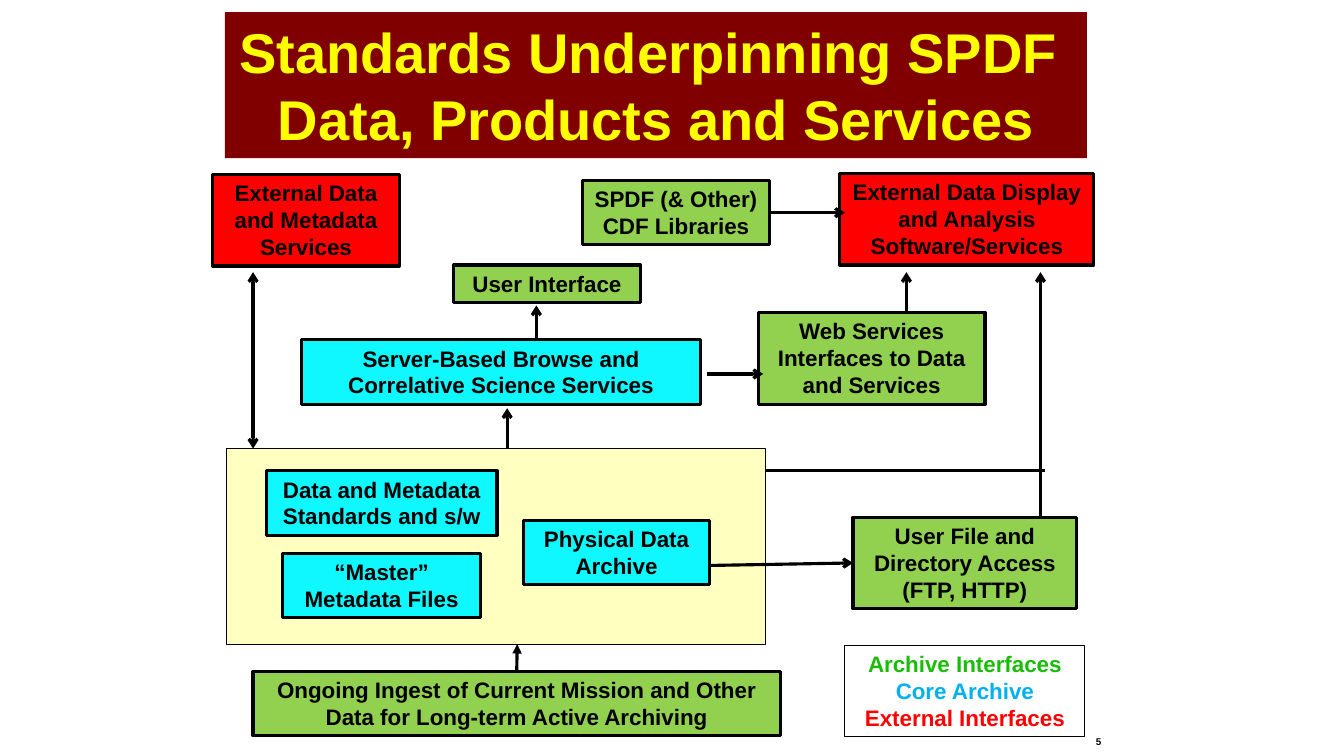
from pptx import Presentation
from pptx.dml.color import RGBColor
from pptx.enum.shapes import MSO_CONNECTOR, MSO_SHAPE
from pptx.enum.text import MSO_ANCHOR, MSO_AUTO_SIZE, PP_ALIGN
from pptx.oxml.ns import qn
from pptx.util import Inches, Pt
from lxml import etree

RECTANGLE = MSO_SHAPE.RECTANGLE
STRAIGHT = MSO_CONNECTOR.STRAIGHT
CENTER = PP_ALIGN.CENTER
TOP = MSO_ANCHOR.TOP
FIT_SHAPE = MSO_AUTO_SIZE.SHAPE_TO_FIT_TEXT
TOP_SIDE, LEFT_SIDE, RIGHT_SIDE = 0, 1, 3

THEME = {
    "font": "Arial",
    "title_size": 40, "body_size": 16, "number_size": 7,
    "thin": 0.75, "thick": 2.25,
    "ink": "000000", "title_fill": "800000", "title_text": "FFFF00",
    "interface": "92D050", "core": "10F8FF", "external": "FF0000",
    "archive": "FFFF00", "archive_opacity": 25,
    "interface_key": "18BD05", "core_key": "00B0F0", "external_key": "FF0000",
}

# Content: text lines and (left, top, width, height) in inches
TITLE = (["Standards Underpinning SPDF ", "Data, Products and Services"],
         (2.23, 0.12, 8.55, 1.45))
ARCHIVE_AREA = (2.25, 4.45, 5.34, 1.94)
PAGE_NUMBER = ("5", (10.69, 7.24, 0.41, 0.26))
BOX_HEIGHTS = {1: 0.37, 2: 0.64, 3: 0.91}  # by number of text rows

# name: (paragraphs, role, left, top, width, text rows)
BOXES = {
    "ingest": (["Ongoing Ingest of Current Mission and Other Data for "
                "Long-term Active Archiving"], "interface", 2.51, 6.66, 5.23, 2),
    "browse": (["Server-Based Browse and Correlative Science Services"],
               "core", 2.99, 3.37, 3.96, 2),
    "web": (["Web Services Interfaces to Data and Services"],
            "interface", 7.52, 3.1, 2.25, 3),
    "files": (["User File and Directory Access (FTP, HTTP)"],
              "interface", 8.46, 5.13, 2.22, 3),
    "display": (["External Data Display and Analysis Software/Services"],
                "external", 8.33, 1.72, 2.52, 3),
    "user": (["User Interface"], "interface", 4.5, 2.63, 1.85, 1),
    "services": (["External Data and Metadata Services"],
                 "external", 2.11, 1.73, 1.85, 3),
    "physical": (["Physical Data", "Archive"], "core", 5.19, 5.16, 1.85, 2),
    "standards": (["Data and Metadata Standards and s/w"],
                  "core", 2.64, 4.67, 2.29, 2),
    "master": (["“Master” Metadata Files"], "core", 2.8, 5.49, 1.97, 2),
    "cdf": (["SPDF (& Other)", "CDF Libraries"], "interface", 5.78, 1.79, 1.85, 2),
}

LEGEND_AT = (8.38, 6.4, 2.38, 0.91)
LEGEND = [("Archive Interfaces", "interface_key"),
          ("Core Archive", "core_key"),
          ("External Interfaces", "external_key")]

# (start, end, head at start, head at end, joined start, joined end)
LINKS = [
    ((2.51, 2.7), (2.51, 4.45), "arrow", "arrow", None, None),
    ((10.32, 5.13), (10.32, 2.7), None, "arrow", None, None),
    ((5.32, 3.38), (5.32, 3.03), None, "arrow", None, None),
    ((7.59, 4.67), (10.36, 4.67), None, None, None, None),
    ((7.03, 5.61), (8.46, 5.58), None, "arrow", None, ("files", LEFT_SIDE)),
    ((7.01, 3.71), (7.57, 3.71), None, "arrow", None, None),
    ((5.13, 6.66), (5.13, 6.39), None, "triangle", ("ingest", TOP_SIDE), None),
    ((5.03, 4.44), (5.03, 4.05), None, "arrow", None, None),
    ((8.99, 3.1), (8.99, 2.7), None, "arrow", None, None),
    ((7.63, 2.11), (8.38, 2.11), None, "arrow", ("cdf", RIGHT_SIDE), None),
]


def color(role):
    return RGBColor.from_string(THEME[role])


def write(frame, lines, size, roles, wrap=True):
    frame.word_wrap = wrap
    frame.vertical_anchor = TOP
    for i, (line, role) in enumerate(zip(lines, roles)):
        paragraph = frame.paragraphs[0] if i == 0 else frame.add_paragraph()
        paragraph.text = line
        paragraph.alignment = CENTER
        font = paragraph.font
        font.name, font.size, font.bold = THEME["font"], Pt(THEME[size]), True
        font.color.rgb = color(role)


def add_box(slide, place, fill=None, weight=None):
    box = slide.shapes.add_shape(RECTANGLE, *map(Inches, place))
    box.shadow.inherit = False
    if fill:
        box.fill.solid()
        box.fill.fore_color.rgb = color(fill)
    else:
        box.fill.background()
    if weight:
        box.line.color.rgb = color("ink")
        box.line.width = Pt(THEME[weight])
    else:
        box.line.fill.background()
    return box


def add_link(slide, boxes, start, end, start_head, end_head, start_join, end_join):
    link = slide.shapes.add_connector(STRAIGHT, *map(Inches, start + end))
    if start_join:
        link.begin_connect(boxes[start_join[0]], start_join[1])
    if end_join:
        link.end_connect(boxes[end_join[0]], end_join[1])
    link.line.color.rgb = color("ink")
    link.line.width = Pt(THEME["thick"])
    outline = link.line._get_or_add_ln()
    for tag, head in (("a:headEnd", start_head), ("a:tailEnd", end_head)):
        if head:
            etree.SubElement(outline, qn(tag), type=head)
    etree.SubElement(link._element.spPr, qn("a:effectLst"))


def main():
    deck = Presentation()
    deck.slide_width, deck.slide_height = Inches(13.33), Inches(7.5)
    slide = deck.slides.add_slide(deck.slide_layouts[6])

    # Title
    lines, place = TITLE
    title = add_box(slide, place, "title_fill")
    write(title.text_frame, lines, "title_size", ["title_text"] * 2, wrap=False)
    title.text_frame.auto_size = FIT_SHAPE

    # Translucent archive area
    area = add_box(slide, ARCHIVE_AREA, "archive", "thin")
    tint = area._element.spPr.find(qn("a:solidFill")).find(qn("a:srgbClr"))
    etree.SubElement(tint, qn("a:alpha"), val=str(THEME["archive_opacity"] * 1000))

    # Page number
    number, place = PAGE_NUMBER
    page = slide.shapes.add_textbox(*map(Inches, place)).text_frame
    page.margin_left = page.margin_right = Inches(0.13)
    page.margin_top = page.margin_bottom = Inches(0.06)
    write(page, [number], "number_size", ["ink"])

    # Boxes
    boxes = {}
    for name, (lines, role, left, top, width, rows) in BOXES.items():
        box = add_box(slide, (left, top, width, BOX_HEIGHTS[rows]), role, "thick")
        write(box.text_frame, lines, "body_size", ["ink"] * len(lines))
        box.text_frame.auto_size = FIT_SHAPE
        boxes[name] = box

    # Links
    for link in LINKS:
        add_link(slide, boxes, *link)

    # Legend
    legend = add_box(slide, LEGEND_AT, weight="thin")
    write(legend.text_frame, *zip(*[(label, ) for label, _ in LEGEND]),
          "body_size", [role for _, role in LEGEND])
    legend.text_frame.auto_size = FIT_SHAPE

    deck.save("out.pptx")


if __name__ == "__main__":
    main()
